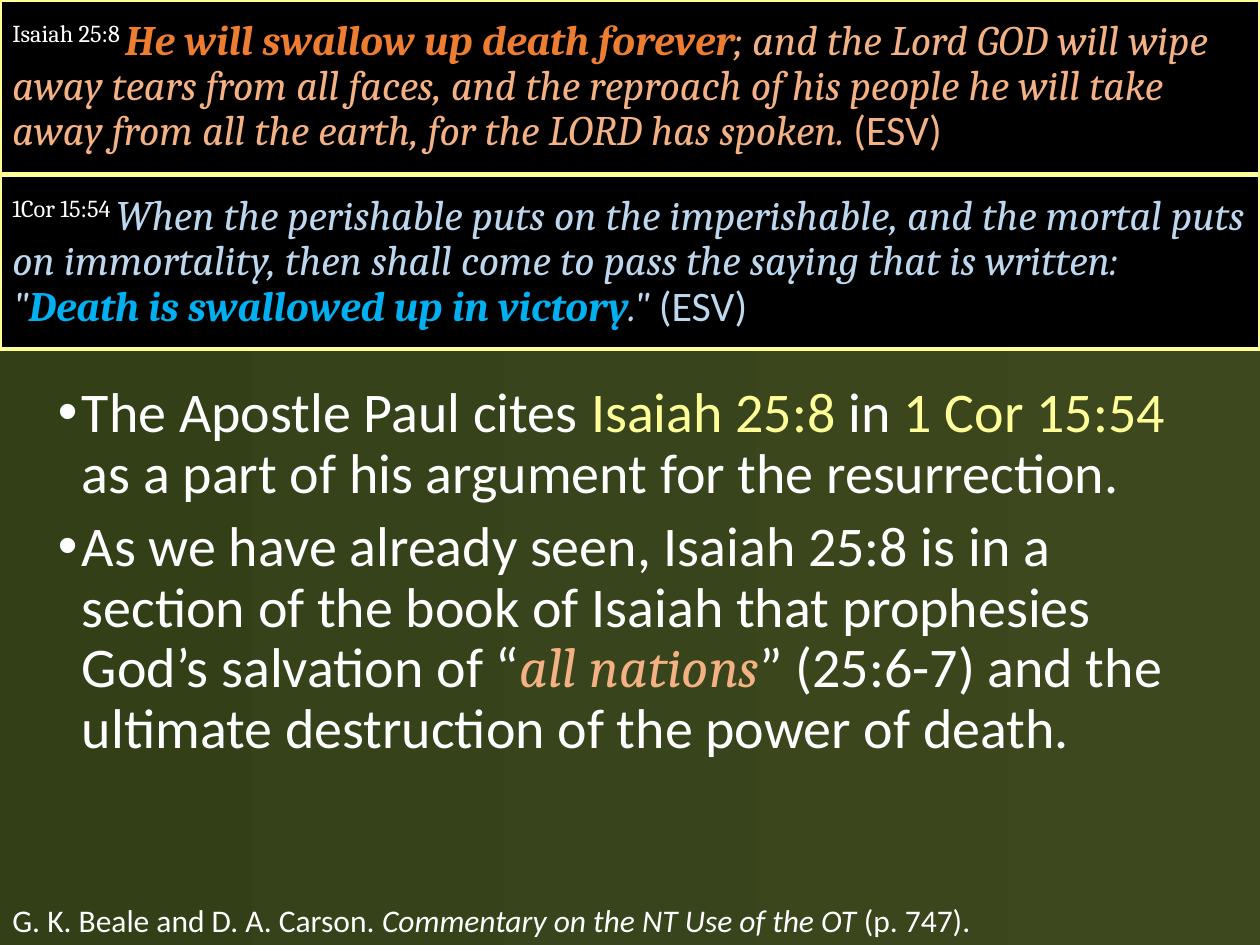
from lxml.etree import SubElement as Sub
from pptx import Presentation
from pptx.dml.color import RGBColor as RGB
from pptx.enum.shapes import MSO_SHAPE as SHAPE
from pptx.enum.text import MSO_ANCHOR as ANCHOR, MSO_AUTO_SIZE as AUTO, PP_ALIGN as ALIGN
from pptx.oxml.ns import qn
from pptx.util import Inches, Pt

WHITE = RGB(0xFF, 0xFF, 0xFF)
BLACK = RGB(0, 0, 0)
YELLOW = RGB(0xFF, 0xFF, 0x99)
ORANGE = RGB(0xED, 0x7D, 0x31)
PEACH = RGB(0xF4, 0xB1, 0x83)
PALE = RGB(0xBD, 0xD7, 0xEE)
BLUE = RGB(0x00, 0xB0, 0xF0)
OLIVE = RGB(0x3D, 0x48, 0x1F)
MOSS = RGB(0x33, 0x40, 0x17)

SANS = {"name": "Calibri"}
SERIF = {"name": "Cambria"}
ITALIC = {"italic": True}
QUOTE = SERIF | ITALIC
STRONG = QUOTE | {"bold": True}

ISAIAH = [
    ("Isaiah 25:8 ", WHITE, SERIF),
    ("He will swallow up death forever", ORANGE, STRONG),
    ("; and the Lord GOD will wipe away tears from all faces, and the reproach "
     "of his people he will take away from all the earth, for the LORD has spoken. ",
     PEACH, QUOTE),
    ("(ESV)", PEACH, SANS),
]
PAUL = [
    ("1Cor 15:54 ", WHITE, SERIF),
    ("When the perishable puts on the imperishable, and the mortal puts on "
     "immortality, then shall come to pass the saying that is written: \"", PALE, QUOTE),
    ("Death is swallowed up in victory", BLUE, STRONG),
    (".\" ", PALE, QUOTE),
    ("(ESV)", PALE, SANS),
]
POINTS = [
    [
        ("The Apostle Paul cites ", WHITE, SANS),
        ("Isaiah 25:8 ", YELLOW, SANS),
        ("in ", WHITE, SANS),
        ("1 Cor 15:54 ", YELLOW, SANS),
        ("as a part of his argument for the resurrection.", WHITE, SANS),
    ],
    [
        ("As we have already seen, Isaiah 25:8 is in a section of the book of "
         "Isaiah that prophesies God’s salvation of “", WHITE, SANS),
        ("all nations", PEACH, QUOTE),
        ("” (25:6-7) and the ultimate destruction of the power of death.", WHITE, SANS),
    ],
]
SOURCE = [
    ("G. K. Beale and D. A. Carson. ", WHITE, SANS),
    ("Commentary on the NT Use of the OT ", WHITE, SANS | ITALIC),
    ("(p. 747).", WHITE, SANS),
]


def put(para, runs, size):
    para.alignment = ALIGN.LEFT
    for text, color, style in runs:
        run = para.add_run()
        run.text = text
        run.font.color.rgb = color
        for key, value in ({"size": Pt(size)} | style).items():
            setattr(run.font, key, value)


def paint(slide):
    fill = slide.background.fill
    fill.gradient()
    fill.gradient_angle = 180
    for stop, color in zip(fill.gradient_stops, (OLIVE, MOSS)):
        stop.color.rgb = color


def verse(slide, top, runs):
    box = slide.shapes.add_shape(SHAPE.RECTANGLE, 0, Inches(top), Inches(10), Inches(1.38))
    box.shadow.inherit = False
    box.fill.solid()
    box.fill.fore_color.rgb = BLACK
    box.line.color.rgb = YELLOW
    box.line.width = Pt(2)
    frame = box.text_frame
    frame.word_wrap = True
    frame.vertical_anchor = ANCHOR.MIDDLE
    para = frame.paragraphs[0]
    para.line_spacing = 0.9
    put(para, runs, 24)
    para.runs[0].font._element.set("baseline", "30000")


def bullet(para):
    props = para._p.get_or_add_pPr()
    props.set("marL", str(Inches(0.19)))
    props.set("indent", str(-Inches(0.19)))
    Sub(props, qn("a:buFont"), typeface="Arial")
    Sub(props, qn("a:buChar"), char="•")


def body(slide):
    hold = slide.placeholders[1]
    area = {"left": 0.36, "top": 3, "width": 9.39, "height": 4.13}
    for key, value in area.items():
        setattr(hold, key, Inches(value))
    frame = hold.text_frame
    frame.auto_size = AUTO.NONE
    frame.vertical_anchor = ANCHOR.TOP
    for i, runs in enumerate(POINTS):
        para = frame.add_paragraph() if i else frame.paragraphs[0]
        bullet(para)
        para.line_spacing = 0.9
        para.space_before = Pt(7.5 if i else 0)
        put(para, runs, 32)


def credit(slide):
    box = slide.shapes.add_textbox(0, Inches(7.1), Inches(10), Inches(0.4))
    frame = box.text_frame
    frame.word_wrap = True
    frame.auto_size = AUTO.SHAPE_TO_FIT_TEXT
    put(frame.paragraphs[0], SOURCE, 18)


def main():
    deck = Presentation()
    deck.slide_width, deck.slide_height = Inches(10), Inches(7.5)
    slide = deck.slides.add_slide(deck.slide_layouts[1])
    title = slide.shapes.title._element
    title.getparent().remove(title)
    paint(slide)
    credit(slide)
    for i, runs in enumerate((ISAIAH, PAUL)):
        verse(slide, i * 1.39, runs)
    body(slide)
    deck.save("out.pptx")


if __name__ == "__main__":
    main()
